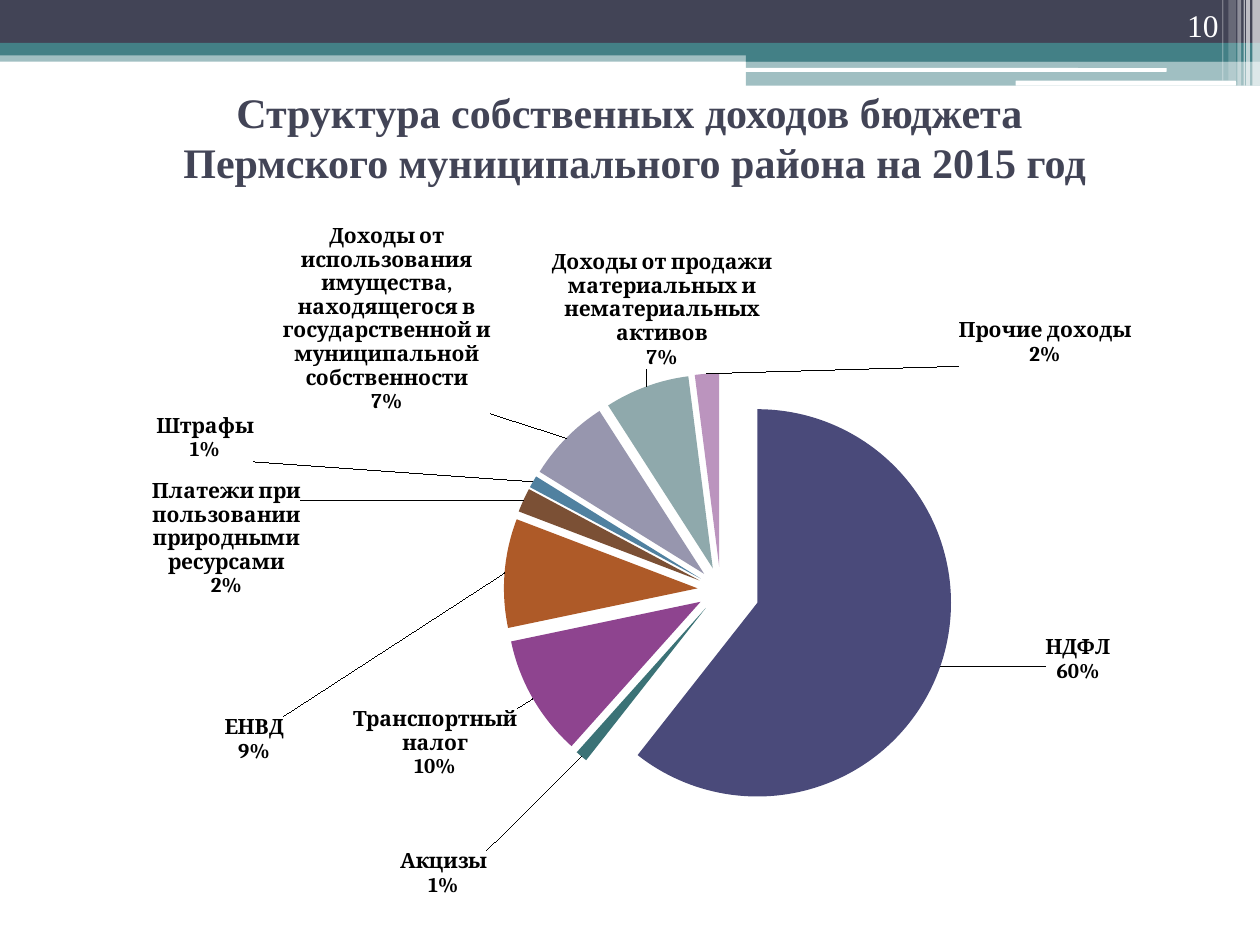
from dataclasses import dataclass

from lxml import etree
from pptx import Presentation
from pptx.chart.data import CategoryChartData
from pptx.dml.color import RGBColor
from pptx.enum.chart import XL_CHART_TYPE
from pptx.enum.shapes import MSO_SHAPE
from pptx.enum.text import MSO_ANCHOR, PP_ALIGN
from pptx.oxml import parse_xml
from pptx.oxml.ns import nsdecls, qn
from pptx.util import Inches, Pt

RECTANGLE, ROUNDED = MSO_SHAPE.RECTANGLE, MSO_SHAPE.ROUNDED_RECTANGLE
MIDDLE, BOTTOM = MSO_ANCHOR.MIDDLE, MSO_ANCHOR.BOTTOM
CENTER, RIGHT = PP_ALIGN.CENTER, PP_ALIGN.RIGHT
PIE = XL_CHART_TYPE.PIE

SLIDE_WIDTH, SLIDE_HEIGHT = Inches(10), Inches(7.5)
COLUMNS, ROWS = 1000, 750


@dataclass(frozen=True)
class Theme:
    dark: str = "424456"
    teal: str = "438086"
    white: str = "FFFFFF"
    black: str = "000000"
    text_font: str = "Times New Roman"
    chart_font: str = "Cambria"
    title_size: int = 24
    number_size: int = 18
    label_size: int = 12


THEME = Theme()

# Category, share in percent, slice colour, label shift in inches
INCOME = [
    ("НДФЛ", 60, "4A4A7A", (0.78, -0.26)),
    ("Акцизы", 1, "3B7276", (-0.71, 0.7)),
    ("Транспортный налог", 10, "8E448F", (-0.07, 0.05)),
    ("ЕНВД", 9, "AE5A28", (-1.69, 1.33)),
    ("Платежи при пользовании природными ресурсами", 2, "7B5035", (-1.71, 0.8)),
    ("Штрафы", 1, "5081A0", (-2.17, -0.13)),
    ("Доходы от использования имущества, находящегося в государственной "
     "и муниципальной собственности", 7, "9796AE", (-0.56, -0.15)),
    ("Доходы от продажи материальных и нематериальных активов", 7, "8FA9AC",
     (1.02, -0.08)),
    ("Прочие доходы", 2, "BB94BE", (2.69, 0)),
]
CHART_CELLS = (35, 178, 926, 538)
PLOT_SHARES = {"x": 0.25, "y": 0.22, "w": 0.66, "h": 0.64}
SLICE_GAP, LEAD_SLICE_GAP = 12, 20

# Header: left, top, width, height in grid cells, colour, opacity in percent
BANDS = [
    (0, 40, 1000, 9, THEME.teal, 50),
    (0, 0, 1000, 34, THEME.dark, 100),
    (0, 34, 1000, 10, THEME.teal, 100),
    (592, 39, 408, 10, THEME.teal, 100),
    (592, 48, 408, 20, THEME.teal, 50),
]
RULES = [(591, 54, 335, 3), (806, 64, 175, 4)]
# Right-hand stripes: left, width, height, opacity
STRIPES = [(994, 6, 68, 65), (989, 3, 68, 65), (987, 1, 68, 60),
           (982, 3, 68, 40), (975, 6, 64, 20), (970, 1, 64, 30)]


def place(left, top, width, height):
    """Turn grid cells into slide lengths."""
    across, down = SLIDE_WIDTH / COLUMNS, SLIDE_HEIGHT / ROWS
    return (round(left * across), round(top * down),
            round(width * across), round(height * down))


def add_block(slide, kind, cells, color, opacity=100):
    block = slide.shapes.add_shape(kind, *place(*cells))
    block.shadow.inherit = False
    block.fill.solid()
    block.fill.fore_color.rgb = RGBColor.from_string(color)
    block.line.fill.background()
    if opacity < 100:
        tint = block.fill._xPr.find(qn("a:solidFill"))[0]
        etree.SubElement(tint, qn("a:alpha"), val=str(opacity * 1000))
    return block


def add_text(slide, cells, text, size, color, align, anchor, bold=False):
    box = slide.shapes.add_textbox(*place(*cells))
    frame = box.text_frame
    frame.word_wrap = True
    frame.vertical_anchor = anchor
    frame.text = text
    para = frame.paragraphs[0]
    para.alignment = align
    for span in para.runs:
        span.font.name = THEME.text_font
        span.font.size = Pt(size)
        span.font.bold = bold
        span.font.color.rgb = RGBColor.from_string(color)


def add_header(slide):
    for *cells, color, opacity in BANDS:
        add_block(slide, RECTANGLE, cells, color, opacity)
    for cells in RULES:
        add_block(slide, ROUNDED, cells, THEME.white)
    for left, width, height, opacity in STRIPES:
        add_block(slide, RECTANGLE, (left, 0, width, height), THEME.white, opacity)


def layout_xml(inner="", **shares):
    parts = "".join(f'<c:{name} val="{value:.3f}"/>' for name, value in shares.items())
    return f"<c:layout><c:manualLayout>{inner}{parts}</c:manualLayout></c:layout>"


def label_xml(index, shift, lines=()):
    """One slice label: moved from its default spot, with fixed lines if given."""
    style = (f'sz="{THEME.label_size * 100}" b="1"><a:solidFill>'
             f'<a:srgbClr val="{THEME.black}"/></a:solidFill>'
             f'<a:latin typeface="{THEME.chart_font}"/>')
    paras = "".join(f'<a:p><a:r><a:rPr lang="ru-RU" {style}</a:rPr><a:t>{line}</a:t>'
                    '</a:r></a:p>' for line in lines)
    fixed = f"<c:tx><c:rich><a:bodyPr/>{paras}</c:rich></c:tx>" if lines else ""
    shown = {"LegendKey": 0, "Val": 0, "CatName": 1, "SerName": 0,
             "Percent": 1, "BubbleSize": 0}
    flags = "".join(f'<c:show{name} val="{on}"/>' for name, on in shown.items())
    width, height = CHART_CELLS[2:]
    spot = layout_xml(x=shift[0] * 100 / width, y=shift[1] * 100 / height)
    return (f'<c:dLbl {nsdecls("c", "a")}><c:idx val="{index}"/>{spot}{fixed}'
            f'<c:spPr><a:noFill/><a:ln><a:noFill/></a:ln></c:spPr>'
            f'<c:txPr><a:bodyPr/><a:p><a:pPr><a:defRPr {style}</a:defRPr></a:pPr></a:p>'
            f'</c:txPr><c:dLblPos val="bestFit"/>{flags}'
            f'<c:separator>\n</c:separator></c:dLbl>')


def set_plot_area(chart):
    area = chart._chartSpace.chart.plotArea
    for old in area.findall(qn("c:layout")):
        area.remove(old)
    modes = ('<c:layoutTarget val="inner"/><c:xMode val="edge"/>'
             '<c:yMode val="edge"/>')
    layout = layout_xml(modes, **PLOT_SHARES)
    area.insert(0, parse_xml(layout.replace("<c:layout>", f'<c:layout {nsdecls("c")}>', 1)))


def explode(owner, percent, before):
    """Pull slices outwards; the element goes ahead of the named sibling."""
    gap = parse_xml(f'<c:explosion {nsdecls("c")} val="{percent}"/>')
    owner.find(qn(before)).addprevious(gap)


def add_income_pie(slide):
    data = CategoryChartData()
    data.categories = [name for name, *_ in INCOME]
    data.add_series("Series 1", [share for _, share, *_ in INCOME])
    chart = slide.shapes.add_chart(PIE, *place(*CHART_CELLS), data).chart
    chart.has_legend = False
    chart.has_title = False
    chart.font.name = THEME.chart_font
    chart.font.size = Pt(THEME.label_size)
    chart.font.color.rgb = RGBColor.from_string(THEME.black)
    set_plot_area(chart)

    # Slices and their labels
    plot = chart.plots[0]
    plot.vary_by_categories = True
    series = plot.series[0]
    labels = series.data_labels
    labels.show_value = False
    labels.show_category_name = True
    labels.show_percentage = True
    labels.font.size = Pt(THEME.label_size)
    labels.font.bold = True
    for index, (name, share, color, shift) in enumerate(INCOME):
        fill = series.points[index].format.fill
        fill.solid()
        fill.fore_color.rgb = RGBColor.from_string(color)
        # Rounded shares add up to 99, so the largest one is spelled out
        lines = (name, f"{share}%") if index == 0 else ()
        labels._element.insert(index, parse_xml(label_xml(index, shift, lines)))
    explode(series._element, SLICE_GAP, "c:dPt")
    for index, lead in enumerate(series._element.findall(qn("c:dPt"))):
        explode(lead, SLICE_GAP if index else LEAD_SLICE_GAP, "c:spPr")


def main():
    deck = Presentation()
    deck.slide_width, deck.slide_height = SLIDE_WIDTH, SLIDE_HEIGHT
    page = deck.slides.add_slide(deck.slide_layouts[6])
    add_header(page)
    add_text(page, (27, 68, 945, 81),
             "Структура собственных доходов бюджета\v"
             " Пермского муниципального района на 2015 год",
             THEME.title_size, THEME.dark, CENTER, MIDDLE, bold=True)
    add_text(page, (894, 0, 83, 40), "10", THEME.number_size, THEME.white, RIGHT, BOTTOM)
    add_income_pie(page)
    deck.save("out.pptx")


if __name__ == "__main__":
    main()
